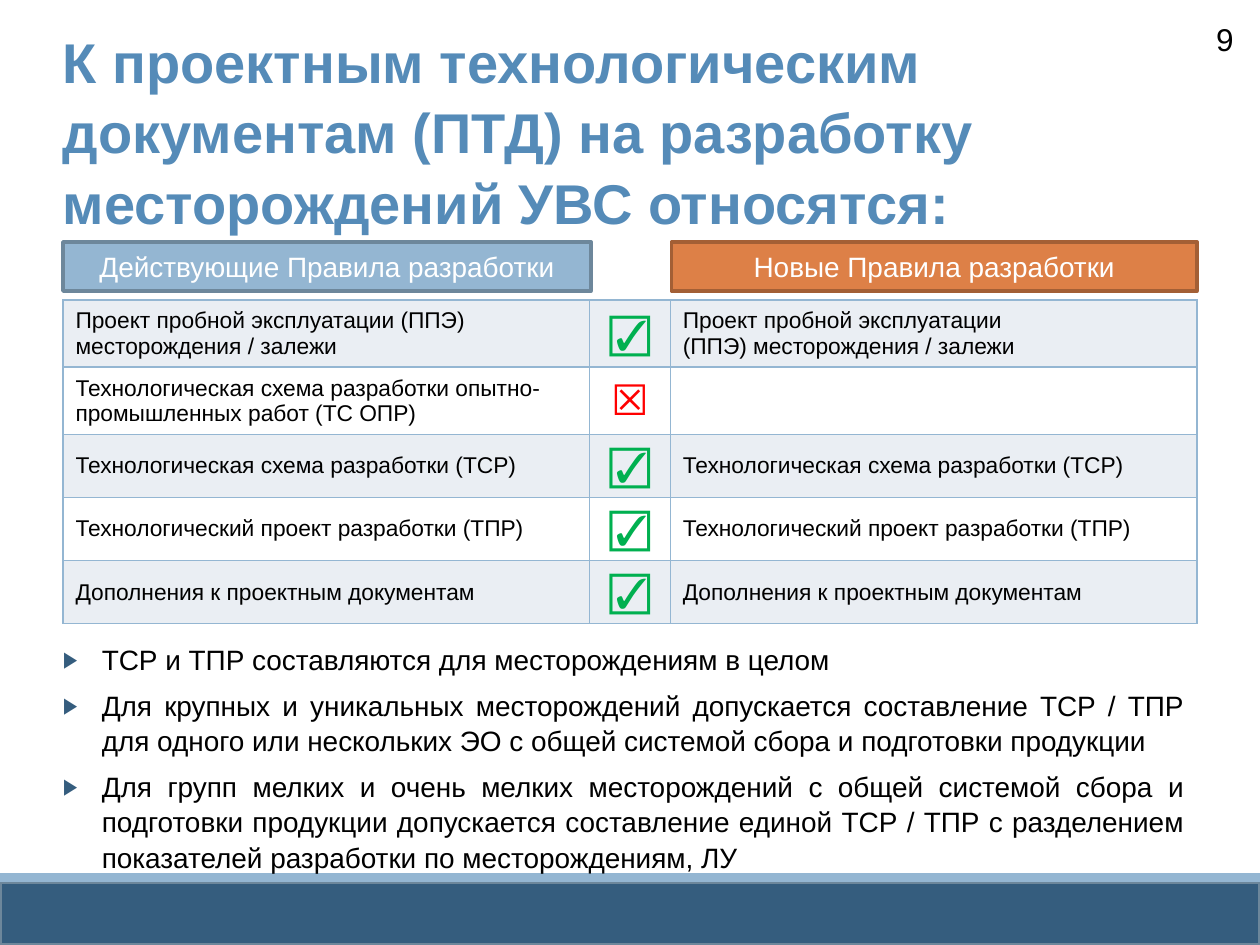
"""Slide on the project documents for developing hydrocarbon fields."""
from pptx import Presentation
from pptx.dml.color import RGBColor
from pptx.enum import shapes, text
from pptx.oxml import parse_xml
from pptx.oxml.ns import nsdecls
from pptx.util import Inches, Pt

NAVY = RGBColor(0x35, 0x5D, 0x7E)
SLATE = RGBColor(0x6D, 0x87, 0x9B)
SKY = RGBColor(0x94, 0xB6, 0xD2)
TITLE_BLUE = RGBColor(0x55, 0x8B, 0xB8)
ORANGE = RGBColor(0xDD, 0x80, 0x47)
BROWN = RGBColor(0xA3, 0x5F, 0x35)
BAND = RGBColor(0xEA, 0xEE, 0xF3)
GREEN = RGBColor(0x00, 0xB0, 0x50)
RED = RGBColor(0xFF, 0x00, 0x00)
BLACK = RGBColor(0, 0, 0)
WHITE = RGBColor(0xFF, 0xFF, 0xFF)
LEFT, CENTER, RIGHT, JUSTIFY = (
    text.PP_ALIGN.LEFT, text.PP_ALIGN.CENTER, text.PP_ALIGN.RIGHT, text.PP_ALIGN.JUSTIFY)

NUMBER = "9"
TITLE = "К проектным технологическим документам (ПТД) на разработку месторождений УВС относятся:"
BARS = [
    ((0, 7, 10, 0.5), NAVY, SLATE, ""),
    ((0, 6.93, 10, 0.07), SKY, None, ""),
    ((0.5, 1.92, 4.19, 0.39), SKY, SLATE, "Действующие Правила разработки"),
    ((5.33, 1.92, 4.17, 0.39), ORANGE, BROWN, "Новые Правила разработки"),
]
MARKS = {"☑": GREEN, "☒": RED}
ROWS = [
    (["Проект пробной эксплуатации (ППЭ) месторождения / залежи"], "☑",
     ["Проект пробной эксплуатации", "(ППЭ) месторождения / залежи"]),
    (["Технологическая схема разработки опытно-промышленных работ (ТС ОПР)"], "☒", [""]),
    (["Технологическая схема разработки (ТСР)"], "☑",
     ["Технологическая схема разработки (ТСР)"]),
    (["Технологический проект разработки (ТПР)"], "☑",
     ["Технологический проект разработки (ТПР)"]),
    (["Дополнения к проектным документам"], "☑", ["Дополнения к проектным документам"]),
]
COL_WIDTHS = [4.18, 0.64, 4.18]
ROW_HEIGHTS = [0.5, 0.5, 0.47, 0.47, 0.47]
NOTES = [
    "ТСР и ТПР составляются для месторождениям в целом",
    "Для крупных и уникальных месторождений допускается составление ТСР / ТПР "
    "для одного или нескольких ЭО с общей системой сбора и подготовки продукции",
    "Для групп мелких и очень мелких месторождений с общей системой сбора и подготовки "
    "продукции допускается составление единой ТСР / ТПР с разделением показателей "
    "разработки по месторождениям, ЛУ",
]


def write(tf, lines, size, color, align=LEFT, bold=False, **para):
    for i, line in enumerate(lines):
        p = tf.paragraphs[0] if i == 0 else tf.add_paragraph()
        for name, value in dict(alignment=align, **para).items():
            setattr(p, name, value)
        font = p.font
        if line:
            r = p.add_run()
            r.text = line
            font = r.font
        for name, value in dict(size=Pt(size), bold=bold, name="Arial").items():
            setattr(font, name, value)
        font.color.rgb = color


def add_text(s, box, lines, size, color, **fmt):
    tf = s.shapes.add_textbox(*map(Inches, box)).text_frame
    tf.word_wrap = True
    write(tf, lines, size, color, **fmt)
    return tf


def add_bar(s, box, fill, line, label):
    sp = s.shapes.add_shape(shapes.MSO_SHAPE.RECTANGLE, *map(Inches, box))
    sp.shadow.inherit = False
    sp.fill.solid()
    sp.fill.fore_color.rgb = fill
    if line is None:
        sp.line.fill.background()
    else:
        sp.line.color.rgb = line
        sp.line.width = Pt(2)
    if label:
        tf = sp.text_frame
        tf.vertical_anchor = text.MSO_ANCHOR.MIDDLE
        tf.margin_left = tf.margin_right = 0
        write(tf, [label], 16, WHITE, CENTER)


def style_cell(cell, banded):
    cell.vertical_anchor = text.MSO_ANCHOR.MIDDLE
    tc_pr = cell._tc.get_or_add_tcPr()
    for side in ("lnL", "lnR", "lnT", "lnB"):
        tc_pr.append(parse_xml(
            f'<a:{side} {nsdecls("a")} w="{Pt(1)}"><a:solidFill>'
            f'<a:srgbClr val="{SKY}"/></a:solidFill></a:{side}>'))
    if banded:
        cell.fill.solid()
        cell.fill.fore_color.rgb = BAND
    else:
        cell.fill.background()


def add_documents(s):
    box = (0.5, 2.38, sum(COL_WIDTHS), sum(ROW_HEIGHTS))
    table = s.shapes.add_table(len(ROWS), len(COL_WIDTHS), *map(Inches, box)).table
    table.first_row = table.horz_banding = False
    for col, width in zip(table.columns, COL_WIDTHS):
        col.width = Inches(width)
    for i, (row, height) in enumerate(zip(ROWS, ROW_HEIGHTS)):
        table.rows[i].height = Inches(height)
        for j, content in enumerate(row):
            cell = table.cell(i, j)
            style_cell(cell, i % 2 == 0)
            if content in MARKS.keys() if isinstance(content, str) else False:
                write(cell.text_frame, [content], 24, MARKS[content], CENTER, True)
            else:
                write(cell.text_frame, content, 13, BLACK)


def add_bullets(tf):
    for p in tf.paragraphs:
        p_pr = p._p.get_or_add_pPr()
        p_pr.set("marL", str(Inches(0.31)))
        p_pr.set("indent", str(Inches(-0.31)))
        for tag in (f'buClr {nsdecls("a")}><a:srgbClr val="{NAVY}"/></a:buClr>',
                    f'buSzPct {nsdecls("a")} val="80000"/>',
                    f'buFont {nsdecls("a")} typeface="Arial"/>',
                    f'buChar {nsdecls("a")} char="▶"/>'):
            p_pr.append(parse_xml("<a:" + tag))


def main():
    prs = Presentation()
    prs.slide_width, prs.slide_height = Inches(10), Inches(7.5)
    s = prs.slides.add_slide(prs.slide_layouts[6])
    for bar in BARS:
        add_bar(s, *bar)
    add_text(s, (8.81, 0.11, 1.08, 0.4), [NUMBER], 18, BLACK, align=RIGHT)
    add_text(s, (0.4, 0.14, 9.1, 0.54), [TITLE], 32, TITLE_BLUE, bold=True, line_spacing=1.05)
    add_documents(s)
    add_bullets(add_text(s, (0.4, 5.04, 9.1, 1.88), NOTES, 16, BLACK, align=JUSTIFY,
                         space_before=Pt(6), line_spacing=1.05))
    prs.save("out.pptx")


if __name__ == "__main__":
    main()
